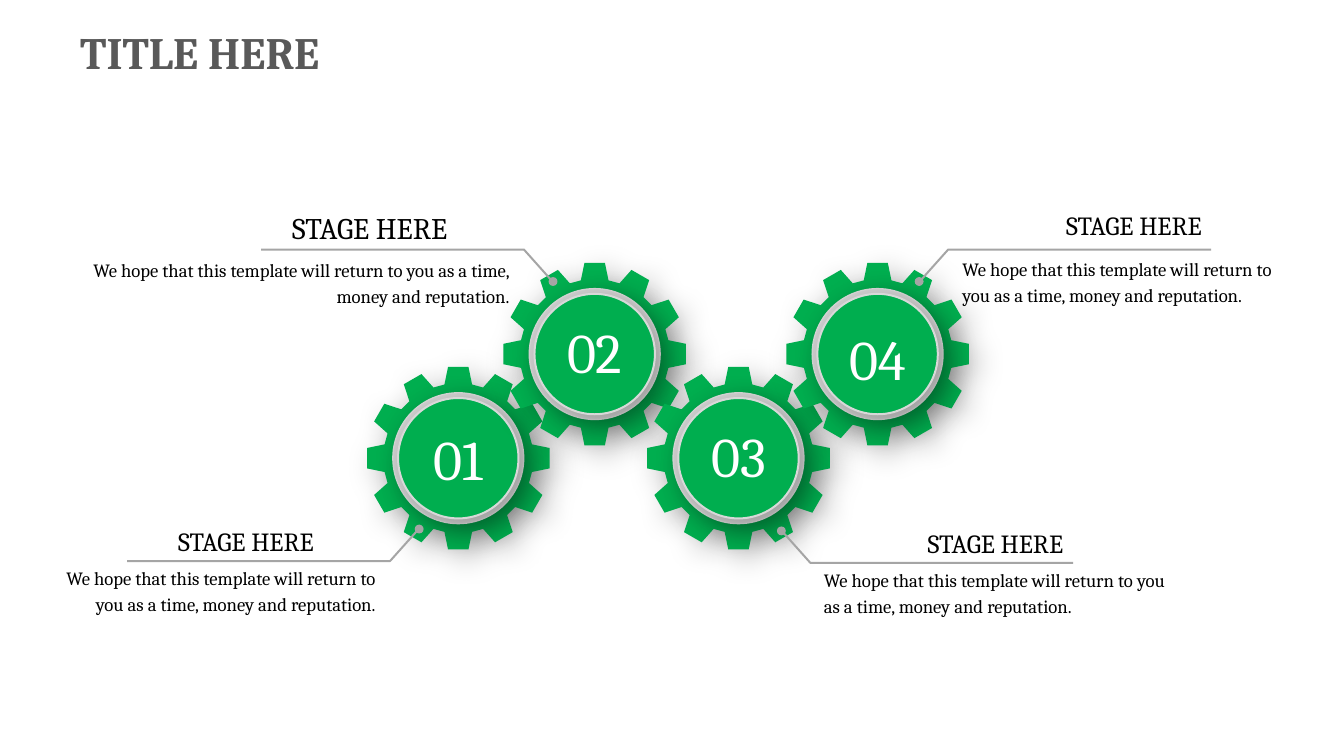
from math import cos, pi, sin

from lxml import etree
from pptx import Presentation
from pptx.dml.color import RGBColor
from pptx.enum.shapes import MSO_SHAPE
from pptx.enum.text import MSO_ANCHOR, MSO_AUTO_SIZE, PP_ALIGN
from pptx.oxml.ns import qn
from pptx.util import Inches, Pt

OVAL = MSO_SHAPE.OVAL
LEFT, CENTER, RIGHT = PP_ALIGN.LEFT, PP_ALIGN.CENTER, PP_ALIGN.RIGHT
TOP, MIDDLE = MSO_ANCHOR.TOP, MSO_ANCHOR.MIDDLE
FIXED = MSO_AUTO_SIZE.NONE

WIDTH, HEIGHT = 14.06, 7.91
COLUMNS = 100
TITLE_ONLY = 5
FONT = "Cambria"
COLORS = {
    "green": "00AE4F",
    "ring": "D0D0D0",
    "rim": "D8D8D8",
    "leader": "A5A5A5",
    "title": "595959",
    "text": "000000",
    "number": "FFFFFF",
}

TEETH = 12
TOOTH = [(-1.03, 5.48), (-0.76, 6.79), (0.76, 6.79), (1.03, 5.48)]
RING_RADIUS, FACE_RADIUS, DOT_RADIUS = 4.87, 4.48, 0.33

HEADING = "STAGE HERE"
BODY = "We hope that this template will return to you as a time, money and reputation."
STAGES = [
    {"number": "01", "gear": (34.1, 34.1), "number_shift": 0,
     "dot": (31.19, 39.37), "direction": (-1, 1), "heading_size": 19.7,
     "heading": (9.46, 38.76, 14.58, 3.06), "body": (3.34, 41.61, 25.32, 6.47)},
    {"number": "02", "gear": (44.25, 26.35), "number_shift": -0.2,
     "dot": (41.15, 20.95), "direction": (-1, -1), "heading_size": 22.5,
     "heading": (16.65, 15.22, 17.35, 3.41), "body": (5.83, 18.71, 32.79, 4.55)},
    {"number": "03", "gear": (54.95, 34.1), "number_shift": -0.2,
     "dot": (58.14, 39.51), "direction": (1, 1), "heading_size": 19.7,
     "heading": (65.22, 38.9, 14.58, 3.06), "body": (60.6, 41.75, 26.88, 4.55)},
    {"number": "04", "gear": (65.3, 26.35), "number_shift": 0.3,
     "dot": (68.39, 20.95), "direction": (1, -1), "heading_size": 19.7,
     "heading": (75.53, 15.22, 14.58, 3.06), "body": (70.91, 18.63, 25.75, 4.55)},
]


def rgb(name):
    return RGBColor.from_string(COLORS[name])


def grid(value):
    return Inches(value * WIDTH / COLUMNS)


class StageSlide:
    def __init__(self, presentation):
        self.slide = presentation.slides.add_slide(presentation.slide_layouts[TITLE_ONLY])
        self.shapes = self.slide.shapes

    def fill_text(self, shape, words, size, color, align=LEFT, anchor=TOP, bold=False, spacing=None):
        frame = shape.text_frame
        frame.text = words
        paragraph = frame.paragraphs[0]
        font = paragraph.runs[0].font
        formats = [
            (frame, {"word_wrap": True, "auto_size": FIXED, "vertical_anchor": anchor}),
            (paragraph, {"alignment": align, "line_spacing": spacing}),
            (font, {"name": FONT, "size": Pt(size), "bold": bold}),
        ]
        for target, values in formats:
            for name, value in values.items():
                setattr(target, name, value)
        font.color.rgb = rgb(color)

    def title(self, words, box):
        heading = self.shapes.title
        for name, value in zip(("left", "top", "width", "height"), box):
            setattr(heading, name, grid(value))
        self.fill_text(heading, words, 33.8, "title", anchor=MIDDLE, bold=True)

    def text(self, words, box, size, color="text", **style):
        self.fill_text(self.shapes.add_textbox(*map(grid, box)), words, size, color, **style)

    def paint(self, shape, fill=None, line=None, weight=1, shadow=False):
        if fill:
            shape.fill.solid()
            shape.fill.fore_color.rgb = rgb(fill)
        else:
            shape.fill.background()
        if line:
            shape.line.color.rgb = rgb(line)
            shape.line.width = Pt(weight)
        else:
            shape.line.fill.background()
        shape.shadow.inherit = False
        if shadow:
            self.cast_shadow(shape)

    def cast_shadow(self, shape):
        effects = shape._element.spPr.find(qn("a:effectLst"))
        outer = etree.SubElement(effects, qn("a:outerShdw"), blurRad=str(Pt(23)),
                                 dist=str(Pt(9)), dir="2700000", algn="tl", rotWithShape="0")
        black = etree.SubElement(outer, qn("a:srgbClr"), val=COLORS["text"])
        etree.SubElement(black, qn("a:alpha"), val="25000")

    def circle(self, center, radius, **style):
        x, y = center
        box = (x - radius, y - radius, 2 * radius, 2 * radius)
        self.paint(self.shapes.add_shape(OVAL, *map(grid, box)), **style)

    def outline(self, points, close, **style):
        start, *rest = [(grid(x), grid(y)) for x, y in points]
        builder = self.shapes.build_freeform(*start)
        builder.add_line_segments(rest, close=close)
        self.paint(builder.convert_to_shape(), **style)

    def gear(self, center):
        x, y = center
        points = []
        for tooth in range(TEETH):
            turn = 2 * pi * tooth / TEETH
            for across, out in TOOTH:
                points.append((x + across * cos(turn) + out * sin(turn),
                               y + across * sin(turn) - out * cos(turn)))
        self.outline(points, True, fill="green", shadow=True)
        self.circle(center, RING_RADIUS, fill="ring", line="rim", shadow=True)
        self.circle(center, FACE_RADIUS, fill="green", line="rim", weight=1.5, shadow=True)

    def leader(self, dot, direction):
        (x, y), (across, down) = dot, direction
        self.circle(dot, DOT_RADIUS, fill="leader")
        elbow_y = y + 2.38 * down
        points = [(x + 0.18 * across, y + 0.16 * down),
                  (x + 2.16 * across, elbow_y), (x + 21.72 * across, elbow_y)]
        self.outline(points, False, line="leader", weight=1.5)

    def callout(self, stage):
        self.leader(stage["dot"], stage["direction"])
        self.text(HEADING, stage["heading"], stage["heading_size"], align=RIGHT)
        body_align = LEFT if stage["direction"][0] > 0 else RIGHT
        self.text(BODY, stage["body"], 14.1, align=body_align, spacing=1.14)

    def number(self, stage):
        x, y = stage["gear"]
        box = (x - 4.09, y - 2.88 + stage["number_shift"], 8.18, 5.76)
        self.text(stage["number"], box, 42.2, "number", align=CENTER)


def main():
    presentation = Presentation()
    presentation.slide_width = Inches(WIDTH)
    presentation.slide_height = Inches(HEIGHT)
    page = StageSlide(presentation)
    page.title("TITLE HERE", (5.26, 1.49, 33.36, 4.77))
    for stage in STAGES:
        page.gear(stage["gear"])
    for stage in reversed(STAGES):
        page.callout(stage)
    for stage in STAGES:
        page.number(stage)
    presentation.save("out.pptx")


if __name__ == "__main__":
    main()
